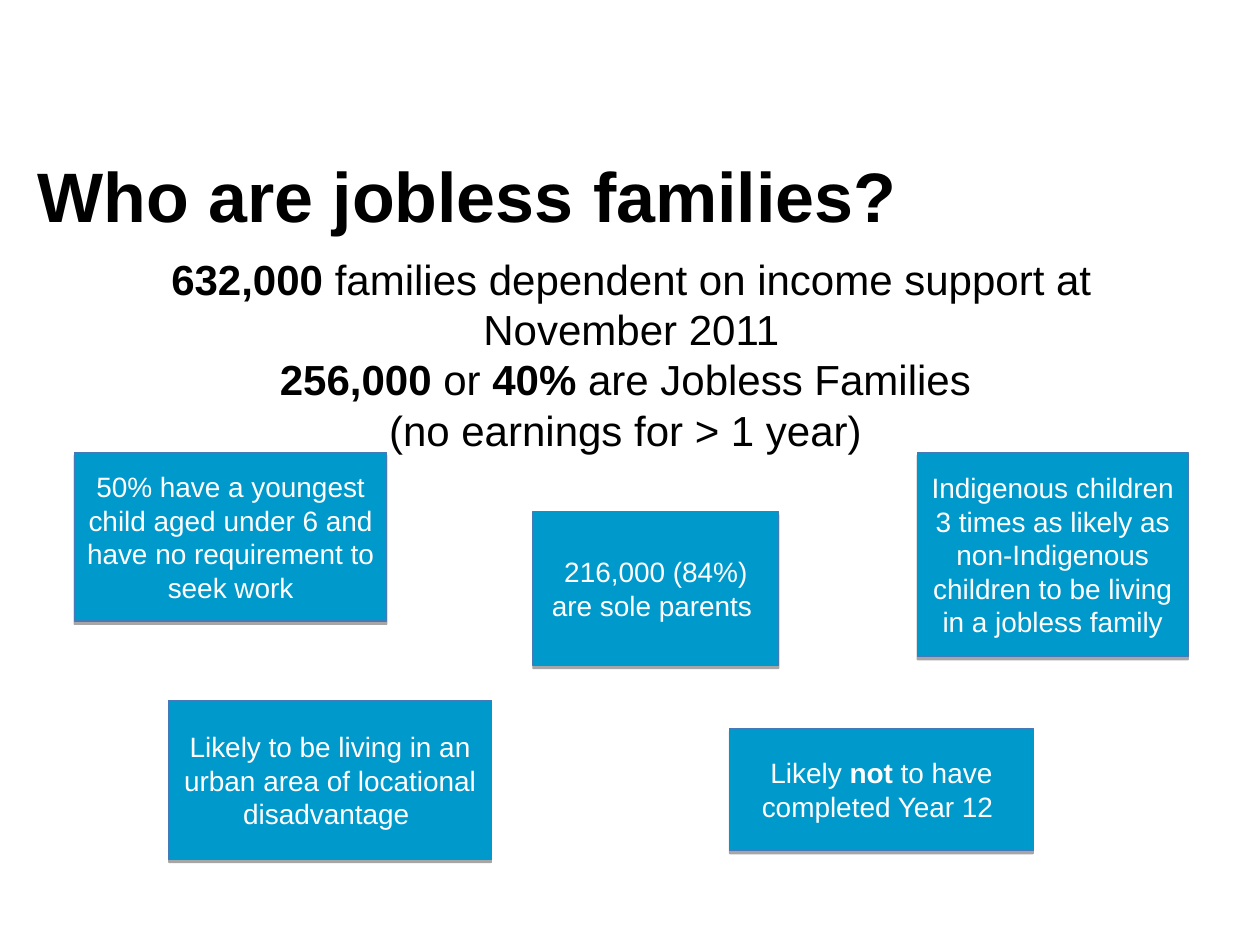
from lxml import etree
from pptx import Presentation
from pptx.dml.color import RGBColor
from pptx.enum.shapes import MSO_SHAPE
from pptx.enum.text import MSO_ANCHOR, PP_ALIGN
from pptx.oxml.ns import qn
from pptx.util import Inches, Pt

RECTANGLE = MSO_SHAPE.RECTANGLE
TOP, MIDDLE = MSO_ANCHOR.TOP, MSO_ANCHOR.MIDDLE
LEFT, CENTER = PP_ALIGN.LEFT, PP_ALIGN.CENTER

SLIDE_WIDTH, SLIDE_HEIGHT = Inches(10), Inches(7.5)
BLACK, WHITE, CARD_BLUE, CARD_EDGE = "000000", "FFFFFF", "0099CC", "4579B8"

# Boxes are left, top, width, height in percent of the slide.
TITLE_BOX = (2, 12.27, 85, 16.67)
SUMMARY_BOX = (5.9, 26.13, 88.4, 24.13)

# A paragraph is a list of (wording, bold) runs.
TITLE = [[("Who are jobless families?", True)]]
SUMMARY = [
    [("632,000 ", True),
     ("families dependent on income support at November 2011", False)],
    [("256,000 ", True), ("or", False), (" 40% ", True),
     ("are Jobless Families ", False)],
    [("(no earnings for > 1 year) ", False)],
]
FACTS = [
    ((72.8, 47.87, 21.5, 21.6),
     [("Indigenous children 3 times as likely as non-Indigenous children "
       "to be living in a jobless family", False)]),
    ((57.9, 77.07, 24.1, 12.93),
     [("Likely ", False), ("not", True),
      (" to have completed Year 12 ", False)]),
    ((42.3, 54.13, 19.5, 16.27),
     [("216,000 (84%) are sole parents ", False)]),
    ((13.4, 74.13, 25.6, 16.8),
     [("Likely to be living in an urban area of locational disadvantage ",
       False)]),
    ((5.9, 47.87, 24.8, 17.87),
     [("50% have a youngest child aged under 6 and have no requirement "
       "to seek work", False)]),
]


def color(value):
    return RGBColor.from_string(value)


def place(box):
    left, top, width, height = box
    return (round(SLIDE_WIDTH * left / 100), round(SLIDE_HEIGHT * top / 100),
            round(SLIDE_WIDTH * width / 100), round(SLIDE_HEIGHT * height / 100))


def write(frame, paragraphs, size, ink=BLACK, align=CENTER, anchor=TOP):
    frame.word_wrap = True
    frame.vertical_anchor = anchor
    for index, runs in enumerate(paragraphs):
        paragraph = frame.paragraphs[0] if index == 0 else frame.add_paragraph()
        paragraph.alignment = align
        for wording, bold in runs:
            run = paragraph.add_run()
            run.text = wording
            run.font.name = "Arial"
            run.font.size = Pt(size)
            run.font.bold = bold
            run.font.color.rgb = color(ink)


def add_drop_shadow(shape):
    """Cast a sharp, 35% black shadow straight down."""
    shape.shadow.inherit = False
    effects = shape._element.spPr.find(qn("a:effectLst"))
    shadow = etree.SubElement(effects, qn("a:outerShdw"), blurRad="0",
                              dist=str(Pt(1.8)), dir="5400000", rotWithShape="0")
    tint = etree.SubElement(shadow, qn("a:srgbClr"), val=BLACK)
    etree.SubElement(tint, qn("a:alpha"), val="35000")


def add_title(slide, box):
    title = slide.shapes.add_textbox(*place(box))
    write(title.text_frame, TITLE, size=40, align=LEFT, anchor=MIDDLE)


def add_summary(slide, box):
    summary = slide.shapes.add_textbox(*place(box))
    write(summary.text_frame, SUMMARY, size=24)


def add_fact_card(slide, box, fact):
    card = slide.shapes.add_shape(RECTANGLE, *place(box))
    card.fill.solid()
    card.fill.fore_color.rgb = color(CARD_BLUE)
    card.line.color.rgb = color(CARD_EDGE)
    card.line.width = Pt(0.75)
    add_drop_shadow(card)
    write(card.text_frame, [fact], size=16, ink=WHITE, anchor=MIDDLE)


def main():
    deck = Presentation()
    deck.slide_width, deck.slide_height = SLIDE_WIDTH, SLIDE_HEIGHT
    slide = deck.slides.add_slide(deck.slide_layouts[6])
    add_title(slide, TITLE_BOX)
    for box, fact in FACTS:
        add_fact_card(slide, box, fact)
    add_summary(slide, SUMMARY_BOX)
    deck.save("out.pptx")


if __name__ == "__main__":
    main()
